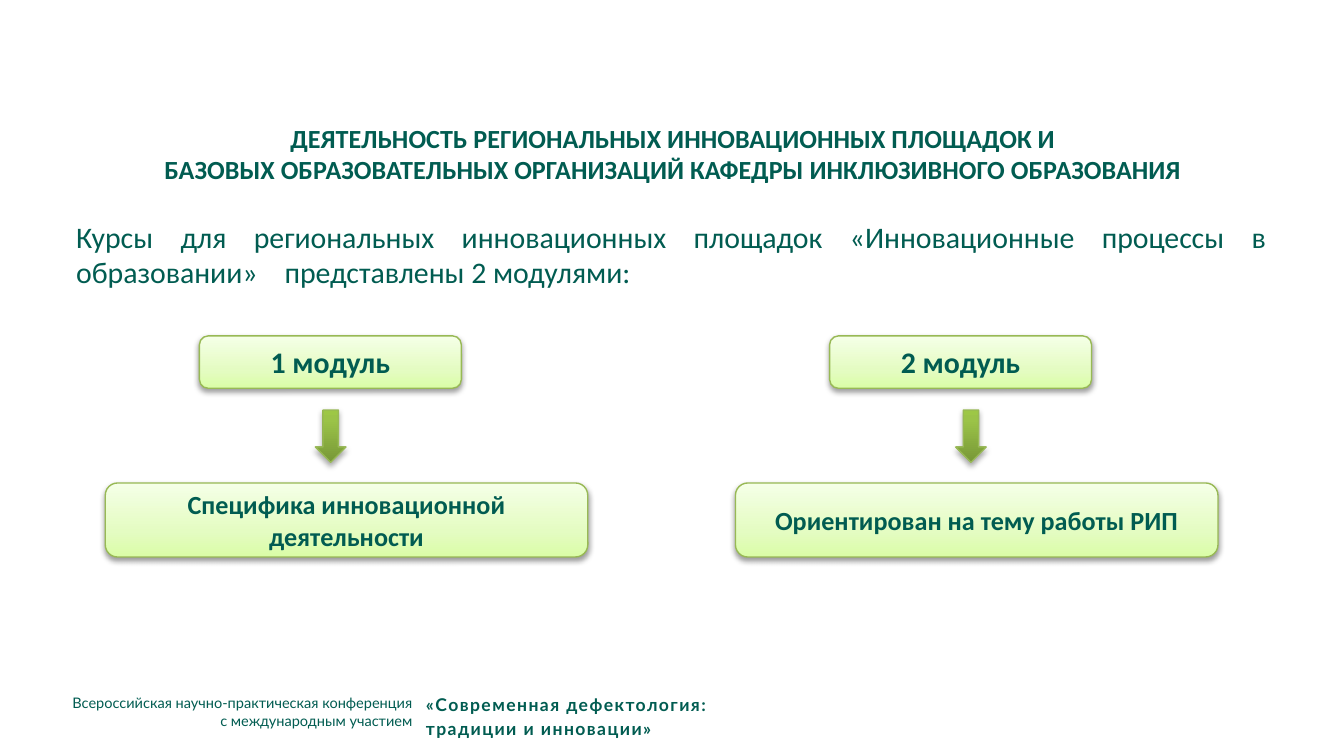
from lxml import etree
from pptx import Presentation, util as u
from pptx.dml.color import RGBColor
from pptx.enum import shapes, text
from pptx.oxml import ns

DARK = "015C51"
EDGE = "98B955"
PALE = [(0, "DAFDA7"), (35, "E4FCC2"), (100, "F5FFE7")]
DEEP = [(0, "779737"), (80, "9BC348"), (100, "9DC746")]
ALIGN = text.PP_ALIGN
KIND = shapes.MSO_SHAPE


def color(code):
    return RGBColor.from_string(code)


def sub(node, tag, **attrs):
    return etree.SubElement(node, ns.qn(tag), {k: str(v) for k, v in attrs.items()})


def write(frame, lines, size=14, font="Calibri", bold=False, align=ALIGN.LEFT,
          anchor=text.MSO_ANCHOR.TOP, indent=0, gap=0, track=0, tab=0):
    frame.word_wrap = True
    frame.auto_size = text.MSO_AUTO_SIZE.NONE
    frame.vertical_anchor = anchor
    for i, line in enumerate(lines):
        para = frame.add_paragraph() if i else frame.paragraphs[0]
        para.alignment = align
        if gap and i:
            para.space_before = u.Pt(gap)
        props = para._p.get_or_add_pPr()
        if indent:
            props.set("indent", str(u.Cm(indent)))
        if tab:
            sub(sub(props, "a:tabLst"), "a:tab", pos=u.Cm(tab), algn="l")
        run = para.add_run()
        run.text = line
        run.font.size = u.Pt(size)
        run.font.name = font
        run.font.bold = bold
        run.font.color.rgb = color(DARK)
        if track:
            run.font._element.set("spc", str(round(track * 100)))


class Deck:
    def __init__(self, wide, high):
        self.prs = Presentation()
        self.prs.slide_width = u.Cm(wide)
        self.prs.slide_height = u.Cm(high)
        self.slide = self.prs.slides.add_slide(self.prs.slide_layouts[5])

    def title(self, box, lines, **style):
        head = self.slide.shapes.title
        head.left, head.top, head.width, head.height = map(u.Cm, box)
        write(head.text_frame, lines, **style)

    def label(self, box, lines, inset=None, **style):
        frame = self.slide.shapes.add_textbox(*map(u.Cm, box)).text_frame
        if inset is not None:
            frame.margin_left = frame.margin_right = frame.margin_bottom = 0
            frame.margin_top = u.Cm(inset)
        write(frame, lines, **style)

    def shape(self, kind, box, stops, depth, dim):
        item = self.slide.shapes.add_shape(kind, *map(u.Cm, box))
        item.fill.gradient()
        item.fill.gradient_angle = 90
        ramp = item._element.spPr.find(".//" + ns.qn("a:gsLst"))
        for old in list(ramp):
            ramp.remove(old)
        for pos, code in stops:
            sub(sub(ramp, "a:gs", pos=pos * 1000), "a:srgbClr", val=code)
        item.line.color.rgb = color(EDGE)
        item.line.width = u.Pt(0.75)
        item.shadow.inherit = False
        glow = sub(item._element.spPr.find(ns.qn("a:effectLst")), "a:outerShdw",
                   blurRad=u.Pt(3.1), dist=u.Pt(depth), dir=5400000, rotWithShape=0)
        sub(sub(glow, "a:srgbClr", val="000000"), "a:alpha", val=dim * 1000)
        return item

    def card(self, box, line, size):
        item = self.shape(KIND.ROUNDED_RECTANGLE, box, PALE, 1.6, 38)
        write(item.text_frame, [line], size=size, bold=True,
              align=ALIGN.CENTER, anchor=text.MSO_ANCHOR.MIDDLE)

    def arrow(self, box):
        self.shape(KIND.DOWN_ARROW, box, DEEP, 1.8, 35)


def main():
    deck = Deck(25.4, 14.29)
    deck.label((8.05, 13.03, 12.24, 0.94),
               ["«Cовременная дефектология:", "традиции и инновации»"],
               inset=0.08, size=9.4, font="Lato", bold=True, gap=1.9, track=0.8)
    deck.label((0, 13, 8.05, 0.91),
               ["Всероссийская научно-практическая конференция",
                "с международным участием"],
               size=7.8, font="Lato", align=ALIGN.RIGHT)
    deck.title((0.79, 2.18, 22.61, 1.45),
               ["ДЕЯТЕЛЬНОСТЬ РЕГИОНАЛЬНЫХ ИННОВАЦИОННЫХ ПЛОЩАДОК И",
                "БАЗОВЫХ ОБРАЗОВАТЕЛЬНЫХ ОРГАНИЗАЦИЙ КАФЕДРЫ ИНКЛЮЗИВНОГО ОБРАЗОВАНИЯ"],
               bold=True, align=ALIGN.CENTER, anchor=text.MSO_ANCHOR.MIDDLE, indent=1.25)
    deck.label((1.19, 4, 23.01, 2.82),
               ["Курсы для региональных инновационных площадок «Инновационные "
                "процессы в образовании»\tпредставлены 2 модулями:"],
               size=16, align=ALIGN.JUSTIFY, tab=3.94)

    parts = [("1 модуль", "Специфика инновационной деятельности"),
             ("2 модуль", "Ориентирован на тему работы РИП")]
    for i, (name, topic) in enumerate(parts):
        shift = i * 11.91
        deck.card((3.77 + shift, 6.35, 4.95, 0.99), name, 16)
        deck.card((1.99 + shift, 9.13, 9.12, 1.4), topic, 14)
        deck.arrow((5.96 + i * 12.1, 7.75, 0.58, 0.99))
    deck.prs.save("out.pptx")


if __name__ == "__main__":
    main()
